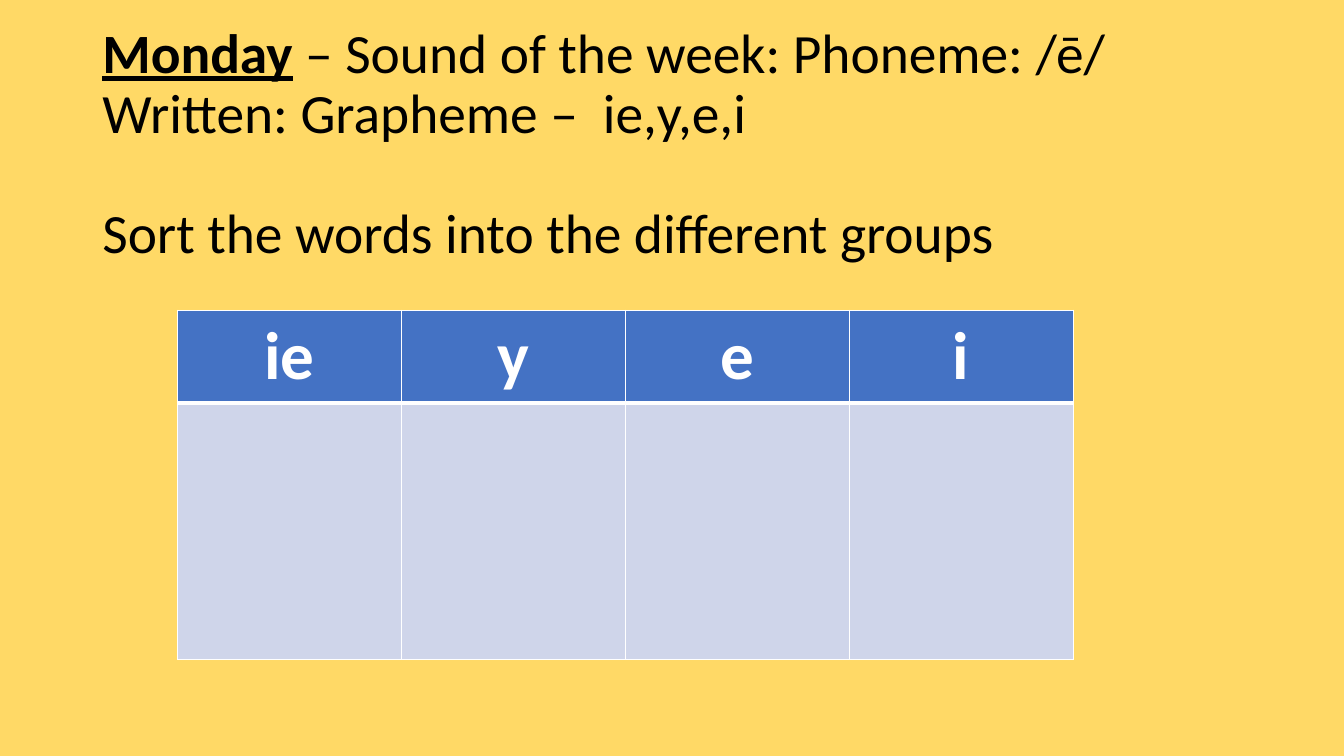
"""Build a phonics slide with a word-sorting table."""
from lxml import etree
from pptx import Presentation
from pptx import util as u
from pptx.dml.color import RGBColor
from pptx.enum import text
from pptx.oxml.ns import qn

SIZE = (33.87, 19.05)
BACKGROUND = "FFD966"
HEADING = [
    {"runs": [("Monday", {"bold": True, "underline": True}),
              (" – Sound of the week: Phoneme: /ē/", {})], "before": 0},
    {"runs": [("Written: Grapheme –  ie,y,e,i", {})], "before": 0},
    {"runs": [("Sort the words into the different groups", {})], "before": 43.5},
]
HEADING_BOX = (2.33, 1.83, 29.21, 3.68)
HEADING_FONT = {"name": "Calibri", "size": u.Pt(39.6)}
GRAPHEMES = ["ie", "y", "e", "i"]
GRAPHEME_FONT = {"name": "Calibri", "size": u.Pt(48), "bold": True}
GRID_CORNER = (4.47, 7.82)
COLUMN_WIDTH = 5.645
ROWS = [
    {"height": 2.34, "fill": "4472C4", "words": GRAPHEMES,
     "borders": {"lnL": 1, "lnR": 1, "lnT": 1, "lnB": 3}},
    {"height": 6.45, "fill": "CFD5EA", "words": [""] * len(GRAPHEMES),
     "borders": {"lnL": 1, "lnR": 1, "lnT": 3, "lnB": 1}},
]


def paint(fill, colour):
    fill.solid()
    fill.fore_color.rgb = RGBColor.from_string(colour)


def apply(target, values):
    for name, value in values.items():
        setattr(target, name, value)


def write(paragraph, words, colour, *formats):
    run = paragraph.add_run()
    run.text = words
    for values in formats:
        apply(run.font, values)
    paint(run.font.fill, colour)


def add_borders(cell, widths):
    properties = cell._tc.get_or_add_tcPr()
    for side, points in widths.items():
        border = etree.SubElement(properties, qn(f"a:{side}"), w=str(u.Pt(points)))
        solid = etree.SubElement(border, qn("a:solidFill"))
        etree.SubElement(solid, qn("a:srgbClr"), val="FFFFFF")


def add_heading(slide):
    frame = slide.shapes.add_textbox(*map(u.Cm, HEADING_BOX)).text_frame
    apply(frame, {"word_wrap": True, "vertical_anchor": text.MSO_ANCHOR.MIDDLE})
    for index, line in enumerate(HEADING):
        paragraph = frame.add_paragraph() if index else frame.paragraphs[0]
        apply(paragraph, {"line_spacing": 0.9, "space_before": u.Pt(line["before"])})
        for words, emphasis in line["runs"]:
            write(paragraph, words, "000000", HEADING_FONT, emphasis)


def add_sorting_grid(slide):
    extent = (COLUMN_WIDTH * len(GRAPHEMES), sum(row["height"] for row in ROWS))
    grid = slide.shapes.add_table(
        len(ROWS), len(GRAPHEMES), *map(u.Cm, GRID_CORNER + extent)).table
    for column in grid.columns:
        column.width = u.Cm(COLUMN_WIDTH)
    for row, content in zip(grid.rows, ROWS):
        row.height = u.Cm(content["height"])
        for cell, words in zip(row.cells, content["words"]):
            add_borders(cell, content["borders"])
            paint(cell.fill, content["fill"])
            if words:
                paragraph = cell.text_frame.paragraphs[0]
                paragraph.alignment = text.PP_ALIGN.CENTER
                write(paragraph, words, "FFFFFF", GRAPHEME_FONT)


def main():
    deck = Presentation()
    deck.slide_width, deck.slide_height = map(u.Cm, SIZE)
    slide = deck.slides.add_slide(deck.slide_layouts[6])
    paint(slide.background.fill, BACKGROUND)
    add_heading(slide)
    add_sorting_grid(slide)
    deck.save("out.pptx")


if __name__ == "__main__":
    main()
